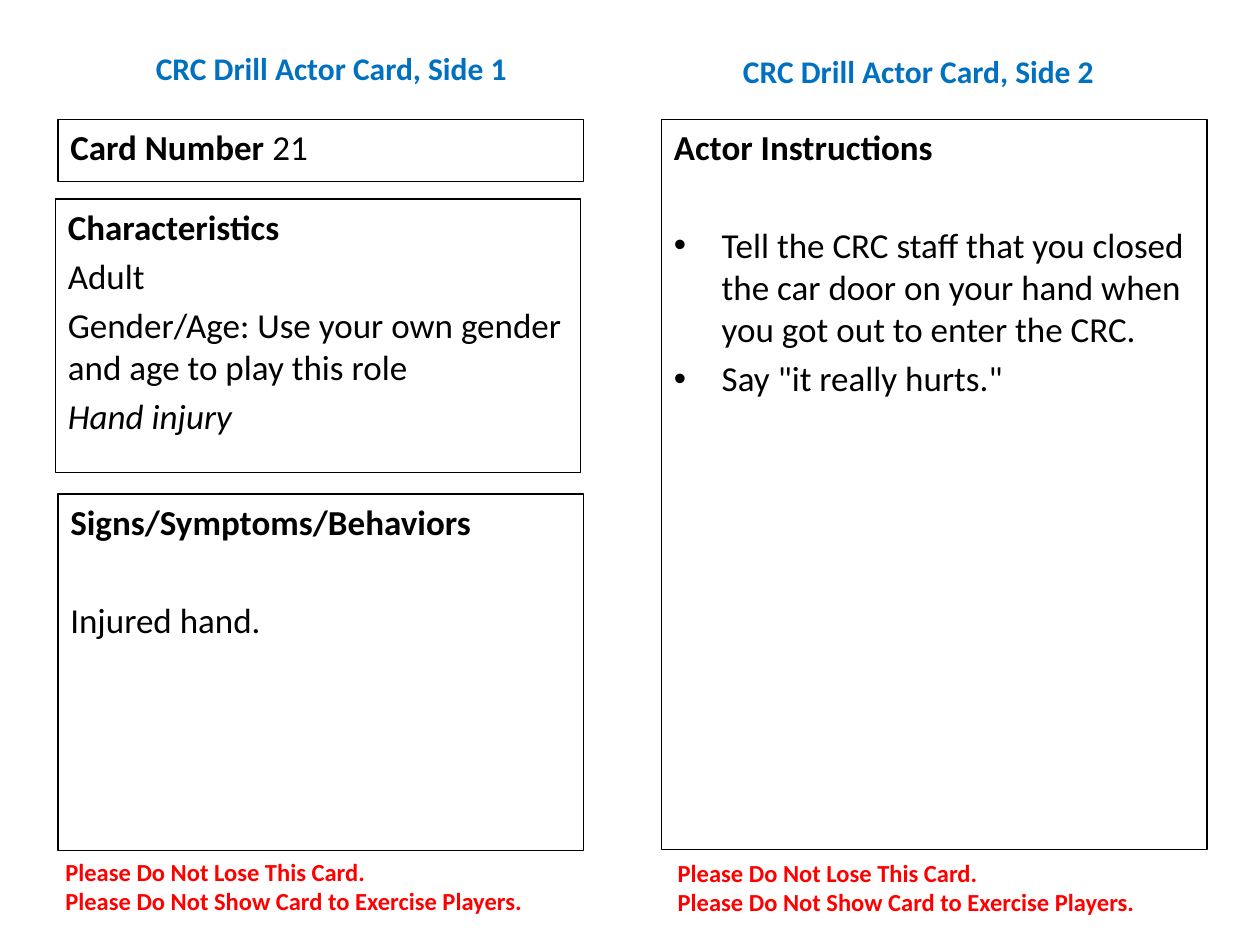
from dataclasses import dataclass

from lxml import etree
from pptx import Presentation
from pptx import util as u
from pptx.dml.color import RGBColor
from pptx.enum import shapes, text
from pptx.oxml.ns import qn

BLACK = RGBColor(0x00, 0x00, 0x00)
BLUE = RGBColor(0x00, 0x70, 0xC0)
RED = RGBColor(0xFF, 0x00, 0x00)
FONT = "Calibri"
TIGHT, WIDE = 4, 32
INDENT = u.Inches(0.38)


@dataclass
class Line:
    words: str
    bold: bool = False
    slant: bool = False
    bullet: bool = False
    gap: int = TIGHT
    tail: str = ""


@dataclass
class Box:
    left: float
    top: float
    width: float
    height: float
    lines: list[Line]


@dataclass
class Side:
    number: int
    title: tuple[float, float]
    footer: tuple[float, float]


WARNING = [
    Line("Please Do Not Lose This Card.", bold=True, gap=0),
    Line("Please Do Not Show Card to Exercise Players.", bold=True, gap=0),
]
SIDES = [
    Side(1, (0.42, 0.15), (0.42, 6.75)),
    Side(2, (5.08, 0.17), (5.28, 6.76)),
]
BOXES = [
    Box(0.46, 0.95, 4.17, 0.49, [
        Line("Card Number ", bold=True, gap=0, tail="21"),
    ]),
    Box(0.44, 1.58, 4.17, 2.17, [
        Line("Characteristics", bold=True, gap=0),
        Line("Adult"),
        Line("Gender/Age: Use your own gender and age to play this role"),
        Line("Hand injury", slant=True),
    ]),
    Box(0.46, 3.92, 4.17, 2.83, [
        Line("Signs/Symptoms/Behaviors", bold=True, gap=0),
        Line("Injured hand.", gap=WIDE),
    ]),
    Box(5.25, 0.95, 4.33, 5.79, [
        Line("Actor Instructions", bold=True, gap=0),
        Line("Tell the CRC staff that you closed the car door on your hand "
             "when you got out to enter the CRC.", bullet=True, gap=WIDE),
        Line('Say "it really hurts."', bullet=True),
    ]),
]


def add_bullet(para) -> None:
    props = para._p.get_or_add_pPr()
    props.set("marL", str(INDENT))
    props.set("indent", str(-INDENT))
    etree.SubElement(props, qn("a:buFont")).set("typeface", "Arial")
    etree.SubElement(props, qn("a:buChar")).set("char", "•")


def write(frame, lines: list[Line], size: int, color: RGBColor,
          align=text.PP_ALIGN.LEFT, anchor=text.MSO_ANCHOR.TOP) -> None:
    frame.word_wrap = True
    frame.vertical_anchor = anchor
    for i, line in enumerate(lines):
        para = frame.add_paragraph() if i else frame.paragraphs[0]
        para.alignment = align
        para.space_before = u.Pt(line.gap)
        if line.bullet:
            add_bullet(para)
        font = para.font
        font.name, font.size = FONT, u.Pt(size)
        font.bold, font.italic = line.bold, line.slant
        font.color.rgb = color
        para.add_run().text = line.words
        if line.tail:
            run = para.add_run()
            run.text = line.tail
            run.font.bold = False


def draw_box(slide, box: Box) -> None:
    shape = slide.shapes.add_shape(
        shapes.MSO_SHAPE.RECTANGLE, u.Inches(box.left), u.Inches(box.top),
        u.Inches(box.width), u.Inches(box.height))
    shape.shadow.inherit = False
    shape.fill.background()
    shape.line.color.rgb = BLACK
    shape.line.width = u.Pt(0.75)
    write(shape.text_frame, box.lines, 20, BLACK)


def add_label(slide, spot: tuple[float, float], width: float, height: float):
    left, top = spot
    return slide.shapes.add_textbox(
        u.Inches(left), u.Inches(top), u.Inches(width),
        u.Inches(height)).text_frame


def draw_side(slide, side: Side) -> None:
    title = Line(f"CRC Drill Actor Card, Side {side.number}", bold=True, gap=0)
    write(add_label(slide, side.title, 4.42, 0.78), [title], 18, BLUE,
          text.PP_ALIGN.CENTER, text.MSO_ANCHOR.MIDDLE)
    write(add_label(slide, side.footer, 4.21, 0.57), WARNING, 14, RED)


def main() -> None:
    deck = Presentation()
    deck.slide_width, deck.slide_height = u.Inches(10), u.Inches(7.5)
    slide = deck.slides.add_slide(deck.slide_layouts[6])
    for side in SIDES:
        draw_side(slide, side)
    for box in BOXES:
        draw_box(slide, box)
    deck.save("out.pptx")


if __name__ == "__main__":
    main()
